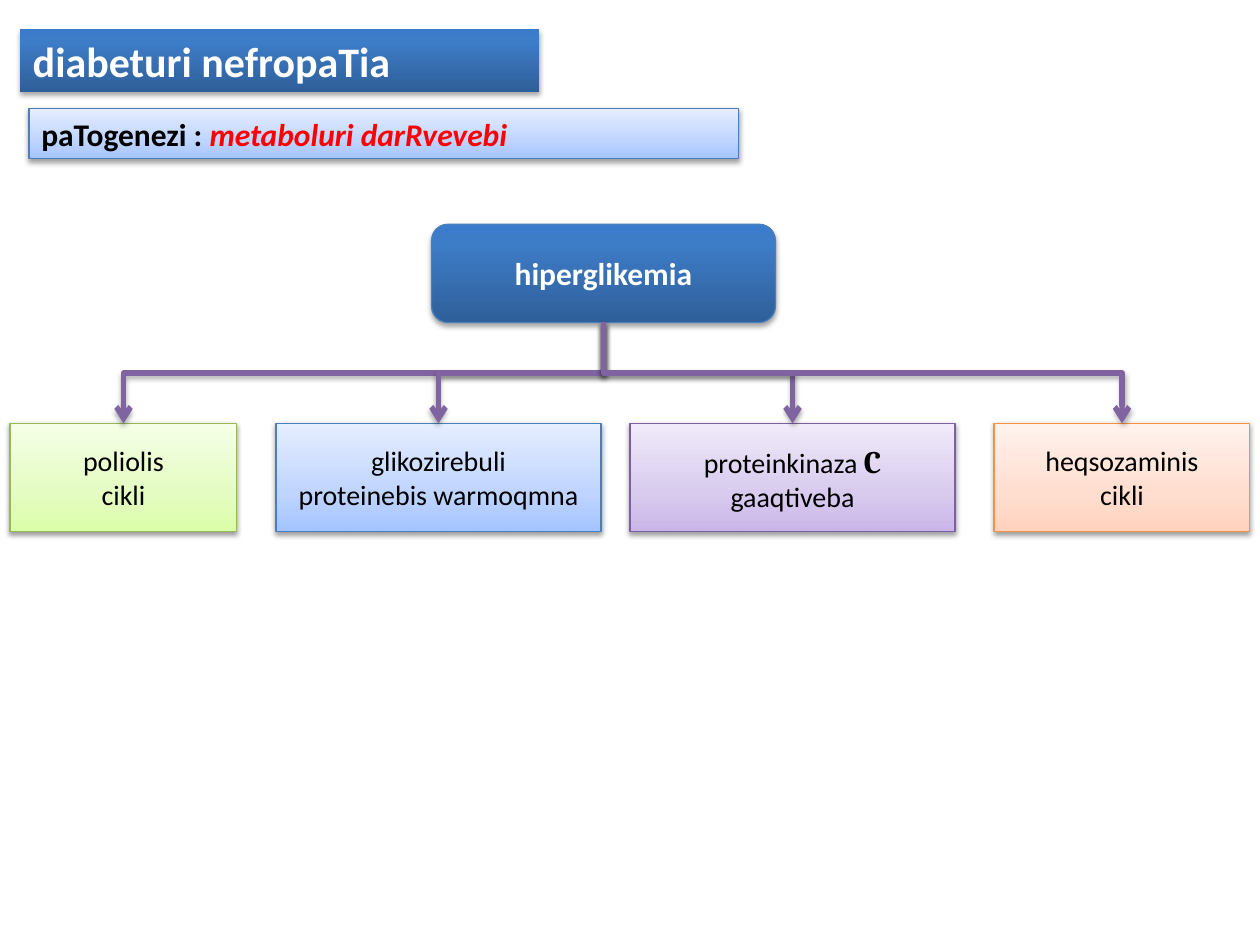
from dataclasses import dataclass, field

from lxml import etree
from pptx import Presentation
from pptx.dml.color import RGBColor
from pptx.enum.shapes import MSO_CONNECTOR, MSO_SHAPE
from pptx.enum.text import MSO_ANCHOR, MSO_AUTO_SIZE, PP_ALIGN
from pptx.oxml.ns import qn
from pptx.util import Emu, Inches, Pt

RECT, ROUNDED = MSO_SHAPE.RECTANGLE, MSO_SHAPE.ROUNDED_RECTANGLE
ELBOW = MSO_CONNECTOR.ELBOW
LEFT, CENTER = PP_ALIGN.LEFT, PP_ALIGN.CENTER
TOP, MIDDLE = MSO_ANCHOR.TOP, MSO_ANCHOR.MIDDLE
NO_FIT = MSO_AUTO_SIZE.NONE
BOTTOM_SITE, TOP_SITE = 2, 0
TITLE_ONLY = 5
COLS, ROWS = 100, 75


@dataclass
class Theme:
    strong: tuple = ((0, "2F5F99"), (80, "3D7CC7"), (100, "3A7CCB"))
    blue: tuple = ((0, "A4C4FF"), (35, "BFD4FF"), (100, "E6EEFF"))
    purple: tuple = ((0, "C9B5E8"), (35, "D8CBEE"), (100, "F0EAF9"))
    orange: tuple = ((0, "FFD2BD"), (35, "FFDED0"), (100, "FFF2ED"))
    green: tuple = ((0, "DAFDA7"), (35, "E4FCC2"), (100, "F5FFE7"))
    blue_edge: str = "4B7EBC"
    purple_edge: str = "7D60A0"
    orange_edge: str = "F69240"
    green_edge: str = "98B955"
    arrow: str = "8064A2"
    soft_shadow: tuple = (38, 1.6)
    deep_shadow: tuple = (35, 1.8)
    title: dict = field(default_factory=lambda: dict(
        name="Calibri", size=Pt(24), bold=True, color="FFFFFF"))
    head: dict = field(default_factory=lambda: dict(
        name="Calibri", size=Pt(18), bold=True, color="FFFFFF"))
    label: dict = field(default_factory=lambda: dict(
        name="Calibri", size=Pt(18), bold=True, color="000000"))
    accent: dict = field(default_factory=lambda: dict(
        name="Calibri", size=Pt(18), bold=True, italic=True, color="FF0000"))
    body: dict = field(default_factory=lambda: dict(
        name="Calibri", size=Pt(16), bold=False, color="000000"))
    letter: dict = field(default_factory=lambda: dict(
        name="Cambria", size=Pt(18), bold=True, color="000000"))


class Deck:
    def __init__(self, theme):
        self.theme = theme
        self.prs = Presentation()
        self.prs.slide_width, self.prs.slide_height = Inches(10), Inches(7.5)
        self.s = self.prs.slides.add_slide(self.prs.slide_layouts[TITLE_ONLY])

    def grid(self, col, row, cols, rows):
        w, h = self.prs.slide_width / COLS, self.prs.slide_height / ROWS
        return [Emu(round(v)) for v in (col * w, row * h, cols * w, rows * h)]

    def shadow(self, effects, look):
        alpha, dist = look
        shdw = etree.SubElement(effects, qn("a:outerShdw"), blurRad=str(Pt(3.1)),
                                dist=str(Pt(dist)), dir="5400000", rotWithShape="0")
        clr = etree.SubElement(shdw, qn("a:srgbClr"), val="000000")
        etree.SubElement(clr, qn("a:alpha"), val=str(alpha * 1000))

    def paint(self, sp, stops, edge, look):
        sp.fill.gradient()
        sp.fill.gradient_angle = 90
        spPr = sp._element.spPr
        gs_lst = spPr.find(".//" + qn("a:gsLst"))
        for gs in list(gs_lst):
            gs_lst.remove(gs)
        for pos, color in stops:
            gs = etree.SubElement(gs_lst, qn("a:gs"), pos=str(pos * 1000))
            etree.SubElement(gs, qn("a:srgbClr"), val=color)
        if edge:
            sp.line.color.rgb = RGBColor.from_string(edge)
            sp.line.width = Pt(0.75)
        else:
            sp.line.fill.background()
        sp.shadow.inherit = False
        self.shadow(spPr.find(qn("a:effectLst")), look)

    def text(self, sp, lines, align, anchor):
        tf = sp.text_frame
        frame = dict(word_wrap=True, auto_size=NO_FIT, vertical_anchor=anchor)
        for key, value in frame.items():
            setattr(tf, key, value)
        for i, runs in enumerate(lines):
            p = tf.add_paragraph() if i else tf.paragraphs[0]
            p.alignment = align
            for words, style in runs:
                r = p.add_run()
                r.text = words
                for key, value in style.items():
                    if key == "color":
                        r.font.color.rgb = RGBColor.from_string(value)
                    else:
                        setattr(r.font, key, value)

    def title(self, words, place):
        sp = self.s.shapes.title
        for key, value in zip(("left", "top", "width", "height"), self.grid(*place)):
            setattr(sp, key, value)
        self.paint(sp, self.theme.strong, None, self.theme.deep_shadow)
        self.text(sp, [[(words, self.theme.title)]], LEFT, TOP)

    def box(self, lines, place, stops, edge, look, kind=RECT, align=CENTER):
        sp = self.s.shapes.add_shape(kind, *self.grid(*place))
        self.paint(sp, stops, edge, look)
        self.text(sp, lines, align, MIDDLE)
        return sp

    def branch(self, parent, child):
        x0, y0 = parent.left + parent.width // 2, parent.top + parent.height
        x1, y1 = child.left + child.width // 2, child.top
        cxn = self.s.shapes.add_connector(ELBOW, x0, y0, x1, y1)
        cxn.begin_connect(parent, BOTTOM_SITE)
        cxn.end_connect(child, TOP_SITE)
        drop, reach = y1 - y0, abs(x1 - x0)
        turned = dict(left=(x0 + x1 - drop) // 2, top=(y0 + y1 - reach) // 2,
                      width=drop, height=reach)
        for key, value in turned.items():
            setattr(cxn, key, Emu(value))
        spPr = cxn._element.spPr
        to_right = x1 > x0
        spin = dict(rot=270.0 if to_right else 90.0, flipH=to_right, flipV=False)
        for key, value in spin.items():
            setattr(spPr.xfrm, key, value)
        cxn.line.color.rgb = RGBColor.from_string(self.theme.arrow)
        cxn.line.width = Pt(3)
        etree.SubElement(spPr.find(qn("a:ln")), qn("a:tailEnd"), type="arrow")
        self.shadow(etree.SubElement(spPr, qn("a:effectLst")), self.theme.deep_shadow)


def main():
    t = Theme()
    deck = Deck(t)
    deck.title("diabeturi nefropaTia", (1.6, 2.3, 41.2, 5))
    deck.box([[("paTogenezi : ", t.label), ("metaboluri darRvevebi", t.accent)]],
             (2.3, 8.6, 56.3, 4), t.blue, t.blue_edge, t.soft_shadow, align=LEFT)
    cause = deck.box([[("hiperglikemia", t.head)]], (34.25, 17.8, 27.3, 7.8),
                     t.strong, t.blue_edge, t.deep_shadow, kind=ROUNDED)
    pathways = [
        (0.8, 18, t.green, t.green_edge,
         [[("poliolis", t.body)], [("cikli", t.body)]]),
        (21.9, 25.8, t.blue, t.blue_edge,
         [[("glikozirebuli", t.body)], [("proteinebis warmoqmna", t.body)]]),
        (50, 25.8, t.purple, t.purple_edge,
         [[("proteinkinaza ", t.body), ("C", t.letter)], [("gaaqtiveba", t.body)]]),
        (78.9, 20.3, t.orange, t.orange_edge,
         [[("heqsozaminis", t.body)], [("cikli", t.body)]]),
    ]
    boxes = [deck.box(lines, (col, 33.6, cols, 8.6), stops, edge, t.soft_shadow)
             for col, cols, stops, edge, lines in pathways]
    for sp in boxes:
        deck.branch(cause, sp)
    deck.prs.save("out.pptx")


if __name__ == "__main__":
    main()
